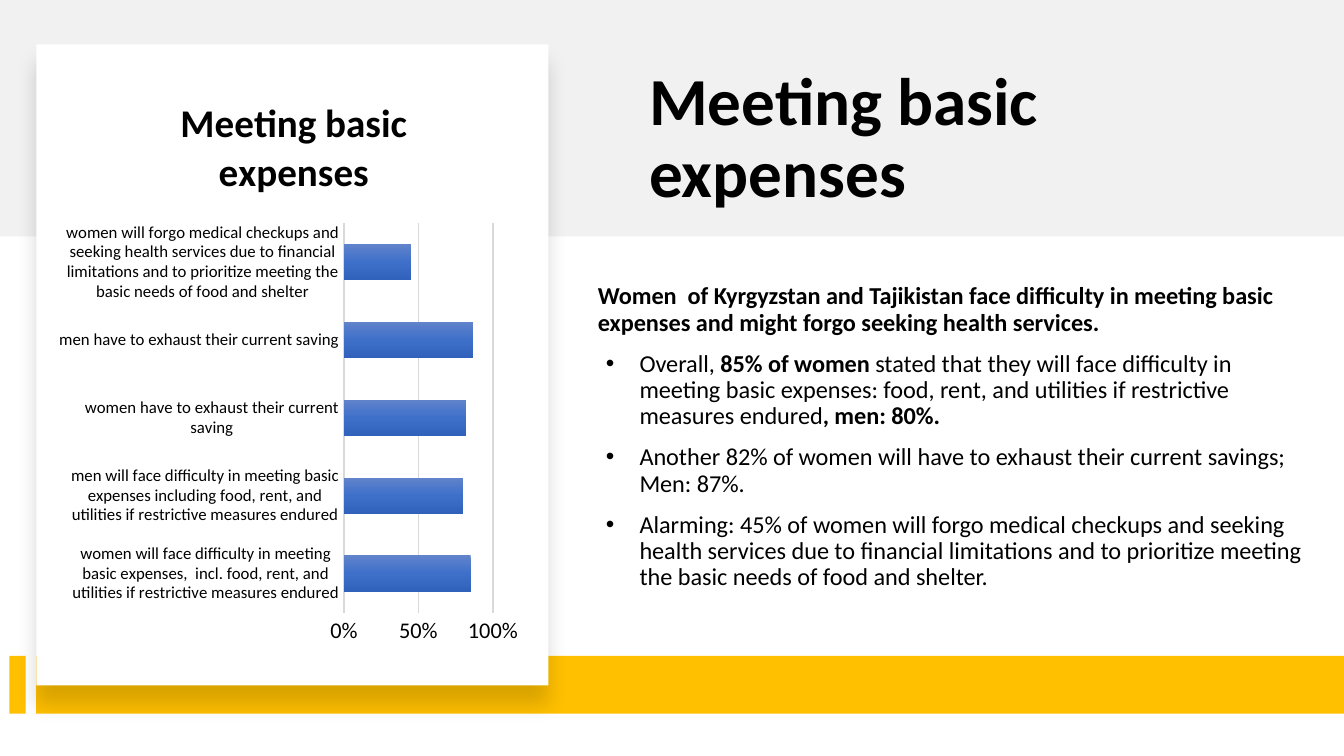
import pptx
import pptx.chart.data
import pptx.dml.color
import pptx.enum.chart
import pptx.enum.shapes
import pptx.enum.text
import pptx.oxml
import pptx.util
from pptx.util import Inches

FONT = "Calibri"
NS = 'xmlns:a="http://schemas.openxmlformats.org/drawingml/2006/main"'
CHART_NS = 'xmlns:c="http://schemas.openxmlformats.org/drawingml/2006/chart"'
TITLE = "Meeting basic expenses"
CHART_TITLE = ["Meeting basic", "expenses"]
PARAGRAPHS = [
    (False, [("Women  of Kyrgyzstan and Tajikistan face difficulty in meeting basic expenses "
              "and might forgo seeking health services.", True)]),
    (True, [("Overall, ", False), ("85% of women ", True),
            ("stated that they will face difficulty in meeting basic expenses: food, rent, "
             "and utilities if restrictive measures endured", False), (", men: 80%.", True)]),
    (True, [("Another 82% of women will have to exhaust their current savings; Men: 87%.", False)]),
    (True, [("Alarming: 45% of women will forgo medical checkups and seeking health services due to "
             "financial limitations and to prioritize meeting the basic needs of food and shelter.", False)]),
]
RESPONSES = [
    ("women will face difficulty in meeting basic expenses,  incl. food, rent, and utilities "
     "if restrictive measures endured", 0.85),
    ("men will face difficulty in meeting basic expenses including food, rent, and utilities "
     "if restrictive measures endured", 0.80),
    ("women have to exhaust their current saving", 0.82),
    ("men have to exhaust their current saving", 0.87),
    ("women will forgo medical checkups and seeking health services due to financial limitations "
     "and to prioritize meeting the basic needs of food and shelter", 0.45),
]
BAR_GRADIENT = [(0, "6183CB"), (50, "3E70CA"), (100, "3062BB")]


def rgb(value):
    """Turn a hex string into a colour."""
    return pptx.dml.color.RGBColor.from_string(value)


def place(left, top, width, height):
    """Convert a position and size in inches to lengths."""
    return [Inches(value) for value in (left, top, width, height)]


def style_font(font, size, bold=False, color="000000"):
    """Set the typeface, size, weight and colour of a font."""
    font.name, font.size, font.bold = FONT, pptx.util.Pt(size), bold
    font.color.rgb = rgb(color)


def add_text(para, text, size, bold=False):
    """Add a formatted span to a paragraph."""
    span = para.add_run()
    span.text = text
    style_font(span.font, size, bold)


def add_panel(page, area, color, opacity=None, shadow=False):
    """Add a borderless rectangle with optional transparency and shadow."""
    panel = page.shapes.add_shape(pptx.enum.shapes.MSO_SHAPE.RECTANGLE, *place(*area))
    panel.shadow.inherit = False
    panel.fill.solid()
    panel.fill.fore_color.rgb = rgb(color)
    panel.line.fill.background()
    properties = panel._element.spPr
    if opacity:
        properties.find(".//{*}solidFill/{*}srgbClr").append(
            pptx.oxml.parse_xml(f'<a:alpha {NS} val="{opacity * 1000}"/>'))
    if shadow:
        properties.find("{*}effectLst").append(pptx.oxml.parse_xml(
            f'<a:outerShdw {NS} blurRad="{pptx.util.Pt(11)}" dist="{pptx.util.Pt(10)}" dir="5400000" '
            'algn="t" rotWithShape="0"><a:srgbClr val="000000"><a:alpha val="15000"/></a:srgbClr>'
            '</a:outerShdw>'))
    return panel


def add_title(page):
    """Place and format the title placeholder."""
    title = page.shapes.title
    title.left, title.top, title.width, title.height = place(4.73, 0.29, 4.79, 1.34)
    frame = title.text_frame
    frame.word_wrap = True
    frame.auto_size = pptx.enum.text.MSO_AUTO_SIZE.NONE
    frame.vertical_anchor = pptx.enum.text.MSO_ANCHOR.BOTTOM
    para = frame.paragraphs[0]
    para.alignment = pptx.enum.text.PP_ALIGN.LEFT
    para.line_spacing = 0.9
    add_text(para, TITLE, 36, True)


def add_findings(page):
    """Add the lead sentence and its bulleted findings."""
    frame = page.shapes.add_textbox(*place(4.35, 1.76, 5.49, 2.99)).text_frame
    frame.word_wrap = True
    frame.vertical_anchor = pptx.enum.text.MSO_ANCHOR.MIDDLE
    for index, (bulleted, spans) in enumerate(PARAGRAPHS):
        para = frame.add_paragraph() if index else frame.paragraphs[0]
        para.line_spacing = 0.9
        para.space_after = pptx.util.Pt(8)
        if bulleted:
            properties = para._p.get_or_add_pPr()
            properties.set("marL", str(Inches(0.31)))
            properties.set("indent", str(Inches(-0.25)))
            properties.append(pptx.oxml.parse_xml(f'<a:buFont {NS} typeface="Arial"/>'))
            properties.append(pptx.oxml.parse_xml(f'<a:buChar {NS} char="•"/>'))
        for text, bold in spans:
            add_text(para, text, 13, bold)


def set_layout(element, **fractions):
    """Give a chart part a manual layout in fractions of the chart."""
    target = '<c:layoutTarget val="inner"/>' if "w" in fractions else ""
    modes = "".join(f'<c:{key}Mode val="edge"/>' for key in fractions if key in "xy")
    values = "".join(f'<c:{key} val="{value}"/>' for key, value in fractions.items())
    layout = element.get_or_add_layout() if hasattr(element, "get_or_add_layout") else element.find("{*}layout")
    new_layout = pptx.oxml.parse_xml(
        f'<c:layout {CHART_NS}><c:manualLayout>{target}{modes}{values}</c:manualLayout></c:layout>')
    if layout is None:
        element.insert(0, new_layout)
    else:
        element.replace(layout, new_layout)


def add_response_chart(page):
    """Add the bar chart of responses."""
    data = pptx.chart.data.CategoryChartData(number_format="0%")
    data.categories = [label for label, _ in RESPONSES]
    data.add_series("Series 1", [share for _, share in RESPONSES])
    chart = page.shapes.add_chart(pptx.enum.chart.XL_CHART_TYPE.BAR_CLUSTERED,
                                  *place(0.44, 0.52, 3.47, 4.39), data).chart
    style_font(chart.font, 10)
    chart.has_legend = False
    frame = chart.chart_title.text_frame
    for index, text in enumerate(CHART_TITLE):
        para = frame.add_paragraph() if index else frame.paragraphs[0]
        add_text(para, text, 21, True)
    set_layout(chart.chart_title._element, x=0.25, y=0.04)
    set_layout(chart._chartSpace.chart.plotArea, x=0.61, y=0.26, w=0.32, h=0.66)

    plot = chart.plots[0]
    plot.gap_width, plot.overlap, plot.vary_by_categories = 115, -20, False
    bars = plot.series[0]
    bars.invert_if_negative = False
    bars.format.fill.gradient()
    stops = "".join(f'<a:gs pos="{position * 1000}"><a:srgbClr val="{color}"/></a:gs>'
                    for position, color in BAR_GRADIENT)
    gradient = bars._element.find(".//{*}gradFill")
    gradient.getparent().replace(gradient, pptx.oxml.parse_xml(
        f'<a:gradFill {NS}><a:gsLst>{stops}</a:gsLst><a:lin ang="5400000" scaled="0"/></a:gradFill>'))

    for axis, size in ((chart.category_axis, 9), (chart.value_axis, 12)):
        axis.major_tick_mark = axis.minor_tick_mark = pptx.enum.chart.XL_TICK_MARK.NONE
        style_font(axis.tick_labels.font, size)
    shares = chart.value_axis
    shares.minimum_scale, shares.maximum_scale, shares.major_unit = 0, 1, 0.5
    shares.tick_labels.number_format = "0%"
    shares.tick_labels.number_format_is_linked = False
    shares.format.line.fill.background()
    for line, width in ((chart.category_axis.format.line, 1), (shares.major_gridlines.format.line, 0.75)):
        line.color.rgb = rgb("D9D9D9")
        line.width = pptx.util.Pt(width)


def main():
    """Build and save the slide."""
    deck = pptx.Presentation()
    deck.slide_width = Inches(10)
    deck.slide_height = deck.slide_width * 9 // 16
    page = deck.slides.add_slide(deck.slide_layouts[5])
    add_title(page)
    header = add_panel(page, (0, 0, 10, 1.76), "D9D9D9", opacity=35)
    page.shapes.title._element.addprevious(header._element)
    for left, width in ((0.07, 0.12), (0.27, 9.73)):
        add_panel(page, (left, 4.88, width, 0.43), "FFC000")
    add_panel(page, (0.27, 0.33, 3.81, 4.77), "FFFFFF", shadow=True)
    add_findings(page)
    add_response_chart(page)
    deck.save("out.pptx")


if __name__ == "__main__":
    main()
